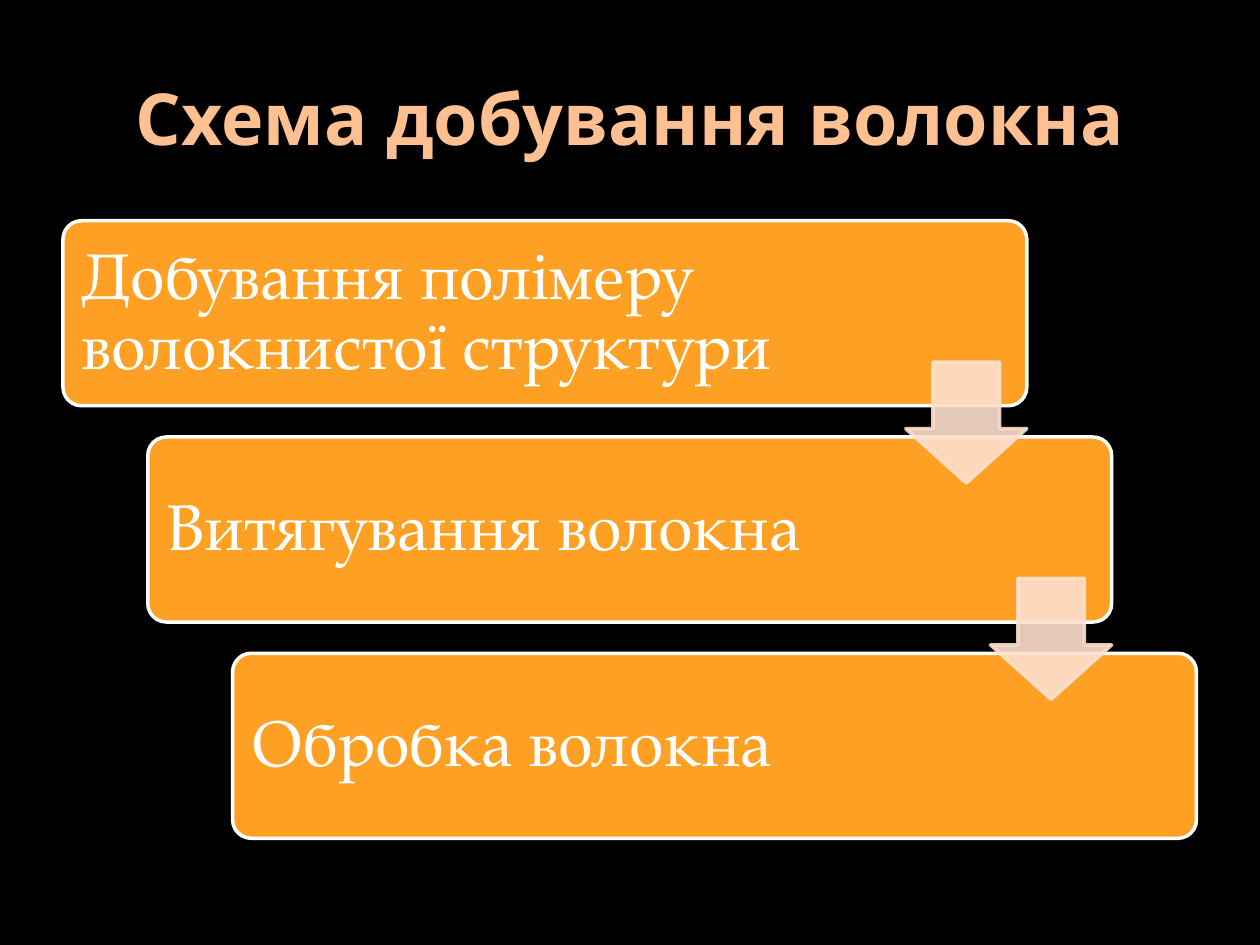
from pptx import Presentation
from pptx.dml.color import RGBColor
from pptx.enum.shapes import MSO_SHAPE as Kind
from pptx.enum.text import MSO_ANCHOR as Anchor, PP_ALIGN as Align
from pptx.oxml.ns import qn
from pptx.util import Cm, Pt
from lxml.etree import SubElement

LABEL = {"name": "TeX Gyre Pagella", "size": Pt(37), "bold": False}
TITLE = {"name": "Noto Sans", "size": Pt(41), "bold": True}


def paint(part, color, alpha=None):
    """Give a fill or a font one solid colour."""
    part.fill.solid()
    part.fill.fore_color.rgb = RGBColor.from_string(color)
    if alpha:
        for tag in part.fill._xPr.iter(qn("a:srgbClr")):
            SubElement(tag, qn("a:alpha"), val=str(alpha * 1000))


def write(text, box, style, color, pad):
    area = slide.shapes.add_textbox(*[Cm(n) for n in box])
    frame = area.text_frame
    form = {"word_wrap": True, "vertical_anchor": Anchor.MIDDLE}
    for side in ("left", "top", "right", "bottom"):
        form["margin_" + side] = Cm(pad)
    for key, val in form.items():
        setattr(frame, key, val)
    para = frame.paragraphs[0]
    para.text = text
    for key, val in style.items():
        setattr(para.runs[0].font, key, val)
    paint(para.runs[0].font, color)
    return para


deck = Presentation()
deck.slide_width, deck.slide_height = Cm(25.4), Cm(19.05)
slide = deck.slides.add_slide(deck.slide_layouts[6])
paint(slide.background, "000000")

# Title
head = write("Схема добування волокна", (1.27, 0.76, 22.86, 3.18),
             TITLE, "FFC091", 0.13)
head.alignment = Align.CENTER

# Step boxes go down like stairs, then the arrows lie over them
left, top, wide, high = 1.27, 4.45, 19.43, 3.73
dx, dy, size = 1.71, 4.36, 2.44
steps = [("Добування полімеру волокнистої структури", 15.62),
         ("Витягування волокна", 15.29),
         ("Обробка волокна", 15.29)]
cards = [(Kind.ROUNDED_RECTANGLE, left + i * dx, top + i * dy, wide, high,
          (0.1,), "FDA023", "FFFFFF", None) for i in range(len(steps))]
arrows = [(Kind.DOWN_ARROW, left + wide - size + i * dx, top + 2.85 + i * dy,
           size, size, (0.55, 0.45), "FEDFCD", "FEDFCD", 90)
          for i in range(len(steps) - 1)]

for kind, x, y, w, h, bends, fill, edge, alpha in cards + arrows:
    shape = slide.shapes.add_shape(kind, Cm(x), Cm(y), Cm(w), Cm(h))
    shape.shadow.inherit = False
    for i, bend in enumerate(bends):
        shape.adjustments[i] = bend
    paint(shape, fill, alpha)
    paint(shape.line, edge, alpha)
    shape.line.width = Pt(2)

# Step labels
for i, (text, w) in enumerate(steps):
    para = write(text, (left + i * dx, top + i * dy, w, high),
                 LABEL, "FFFFFF", 0.38)
    para.line_spacing = 0.9

deck.save("out.pptx")
